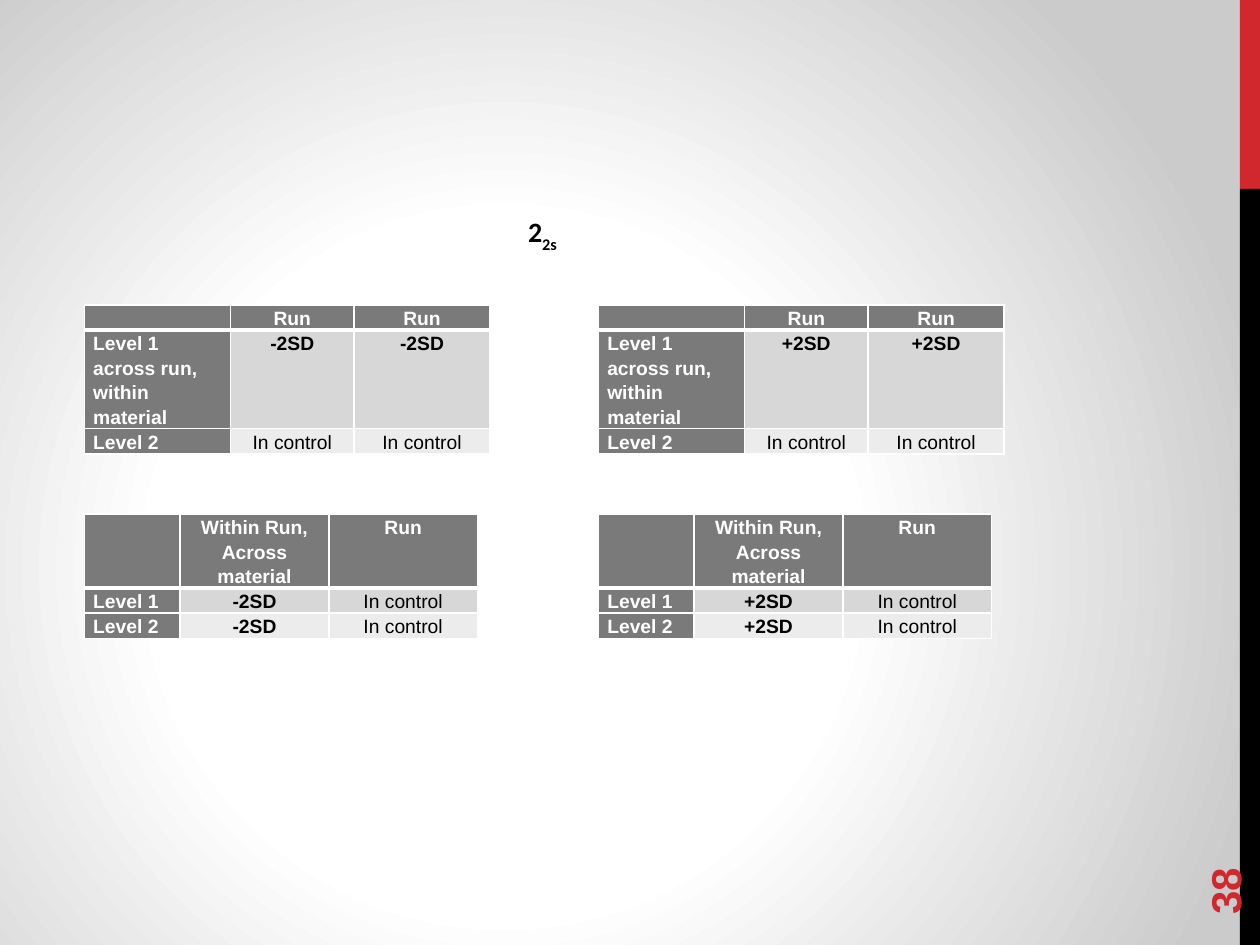
from dataclasses import dataclass

from lxml.etree import SubElement
from pptx import Presentation
from pptx.dml.color import RGBColor
from pptx.enum.shapes import MSO_SHAPE as Shape
from pptx.enum.text import MSO_ANCHOR as Anchor, PP_ALIGN as Align
from pptx.oxml import parse_xml
from pptx.oxml.ns import nsdecls, qn
from pptx.util import Inches, Pt


@dataclass(frozen=True)
class Theme:
    white: str = "FFFFFF"
    black: str = "000000"
    red: str = "D1282E"
    edge_gray: str = "CBCBCB"
    header: str = "7A7A7A"
    bands: tuple = ("D7D7D7", "ECECEC")
    font: str = "Arial"
    rule_font: str = "Calibri"
    cell_size: int = 11
    rule_size: int = 16
    page_size: int = 24
    thin: float = 1
    thick: float = 3


@dataclass(frozen=True)
class ControlGrid:
    left: float
    top: float
    columns: tuple
    heights: tuple
    rows: list


THEME = Theme()
LEFT_SIDE, RIGHT_SIDE = 0.67, 4.75
IN_CONTROL = "In control"


def across_run(left: float, limit: str) -> ControlGrid:
    """Both runs break the limit at one level."""
    return ControlGrid(left, 2.42, (1.16, 0.98, 1.08), (0.2, 0.78, 0.2), [
        ("", "Run", "Run"),
        ("Level 1 across run, within material", limit, limit),
        ("Level 2", IN_CONTROL, IN_CONTROL),
    ])


def within_run(left: float, limit: str) -> ControlGrid:
    """Both levels break the limit in one run."""
    return ControlGrid(left, 4.08, (0.76, 1.18, 1.18), (0.58, 0.2, 0.2), [
        ("", "Within Run, Across material", "Run"),
        ("Level 1", limit, IN_CONTROL),
        ("Level 2", limit, IN_CONTROL),
    ])


def style_run(run, color: str, size: float, font: str = THEME.font,
              bold: bool = True) -> None:
    for key, value in {"name": font, "size": Pt(size), "bold": bold}.items():
        setattr(run.font, key, value)
    run.font.color.rgb = RGBColor.from_string(color)


def set_background(slide) -> None:
    """Radial gradient that is white in the middle."""
    stops = {0: THEME.white, 44: THEME.white, 100: THEME.edge_gray}
    stop_xml = "".join(
        f'<a:gs pos="{pos * 1000}"><a:srgbClr val="{color}"/></a:gs>'
        for pos, color in stops.items())
    slide.element.cSld.insert(0, parse_xml(
        f'<p:bg {nsdecls("p", "a")}><p:bgPr><a:gradFill rotWithShape="1">'
        f'<a:gsLst>{stop_xml}</a:gsLst><a:path path="circle">'
        '<a:fillToRect l="40000" t="60000" r="60000" b="40000"/></a:path>'
        '</a:gradFill><a:effectLst/></p:bgPr></p:bg>'))


def add_bar(slide, top: float, height: float, color: str) -> None:
    bar = slide.shapes.add_shape(Shape.RECTANGLE, Inches(9.84), Inches(top),
                                 Inches(0.16), Inches(height))
    bar.shadow.inherit = False
    bar.fill.solid()
    bar.fill.fore_color.rgb = RGBColor.from_string(color)
    bar.line.fill.background()


def add_label(slide, left: float, top: float, width: float, height: float,
              **frame_format):
    label = slide.shapes.add_textbox(Inches(left), Inches(top),
                                     Inches(width), Inches(height))
    for key, value in frame_format.items():
        setattr(label.text_frame, key, value)
    return label


def set_borders(cell, top: float, bottom: float) -> None:
    widths = {"lnL": THEME.thin, "lnR": THEME.thin, "lnT": top, "lnB": bottom}
    properties = cell._tc.get_or_add_tcPr()
    for index, (side, width) in enumerate(widths.items()):
        properties.insert(index, parse_xml(
            f'<a:{side} {nsdecls("a")} w="{Pt(width)}"><a:solidFill>'
            f'<a:srgbClr val="{THEME.white}"/></a:solidFill></a:{side}>'))


def fill_cell(cell, wording: str, row: int, column: int) -> None:
    heading = row == 0 or column == 0
    fill = THEME.header if heading else THEME.bands[row - 1]
    cell.fill.solid()
    cell.fill.fore_color.rgb = RGBColor.from_string(fill)
    margins = {"margin_left": 0.07, "margin_right": 0.07,
               "margin_top": 0, "margin_bottom": 0}
    for key, value in margins.items():
        setattr(cell, key, Inches(value))
    set_borders(cell, THEME.thick if row == 1 else THEME.thin,
                THEME.thick if row == 0 else THEME.thin)

    paragraph = cell.text_frame.paragraphs[0]
    paragraph.line_spacing = 1.15
    paragraph.alignment = Align.CENTER if column else Align.LEFT
    if wording:
        run = paragraph.add_run()
        run.text = wording
        style_run(run, THEME.white if heading else THEME.black,
                  THEME.cell_size, bold=wording != IN_CONTROL)
    else:
        SubElement(paragraph._p, qn("a:endParaRPr"),
                   sz=str(THEME.cell_size * 100))


def add_grid(slide, grid: ControlGrid) -> None:
    table = slide.shapes.add_table(
        len(grid.rows), len(grid.columns), Inches(grid.left), Inches(grid.top),
        Inches(sum(grid.columns)), Inches(sum(grid.heights))).table
    table.horz_banding = False
    for column, width in zip(table.columns, grid.columns):
        column.width = Inches(width)
    for table_row, height in zip(table.rows, grid.heights):
        table_row.height = Inches(height)
    for row, wordings in enumerate(grid.rows):
        for column, wording in enumerate(wordings):
            fill_cell(table.cell(row, column), wording, row, column)


def main() -> None:
    deck = Presentation()
    deck.slide_width, deck.slide_height = Inches(10), Inches(7.5)
    slide = deck.slides.add_slide(deck.slide_layouts[6])

    # Background and side bars
    set_background(slide)
    add_bar(slide, 0, 1.5, THEME.red)
    add_bar(slide, 1.5, 6, THEME.black)

    # Control tables: lower limit on the left, upper limit on the right
    for left, limit in ((LEFT_SIDE, "-2SD"), (RIGHT_SIDE, "+2SD")):
        add_grid(slide, across_run(left, limit))
        add_grid(slide, within_run(left, limit))

    # Rule name with subscript
    rule = add_label(slide, 1.67, 1.65, 5.27, 0.67, word_wrap=True,
                     vertical_anchor=Anchor.TOP)
    rule_line = rule.text_frame.paragraphs[0]
    rule_line.alignment = Align.CENTER
    for wording, baseline in (("2", 0), ("2s", -30)):
        run = rule_line.add_run()
        run.text = wording
        style_run(run, THEME.black, THEME.rule_size, THEME.rule_font)
        if baseline:
            run.font._element.set("baseline", str(baseline * 1000))

    # Page number, reading upwards
    page = add_label(slide, 9, 6.44, 1.44, 0.4, word_wrap=True,
                     vertical_anchor=Anchor.MIDDLE)
    page.rotation = 270
    number = page.text_frame.paragraphs[0].add_run()
    number.text = "38"
    style_run(number, THEME.red, THEME.page_size)

    deck.save("out.pptx")


if __name__ == "__main__":
    main()
